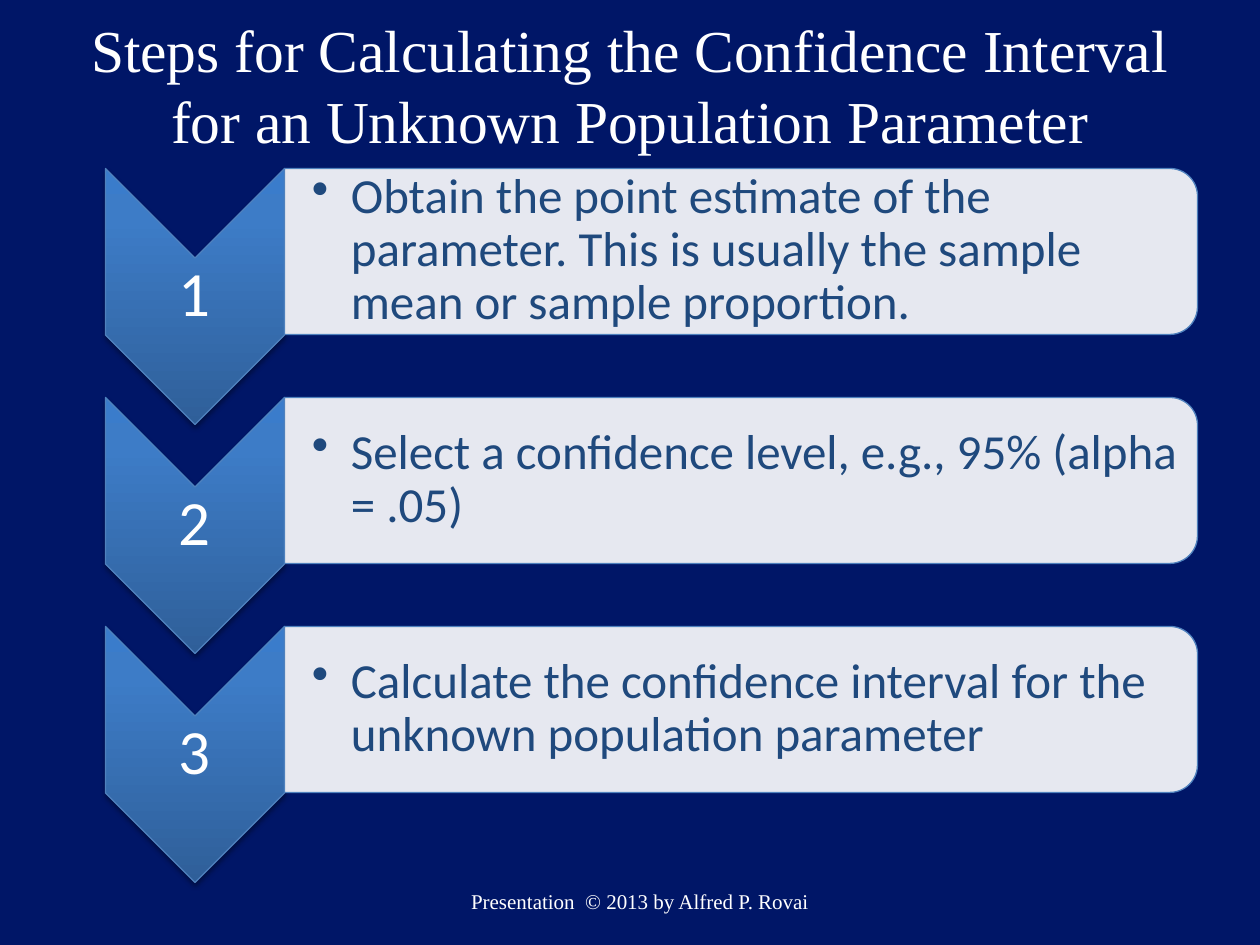
from lxml import etree
from pptx import Presentation
from pptx.dml.color import RGBColor
from pptx.enum.shapes import MSO_SHAPE
from pptx.enum.text import MSO_ANCHOR, PP_ALIGN
from pptx.oxml import parse_xml
from pptx.oxml.ns import qn
from pptx.util import Pt

CHEVRON = MSO_SHAPE.CHEVRON
ROUNDED_END = MSO_SHAPE.ROUND_2_SAME_RECTANGLE
MIDDLE = MSO_ANCHOR.MIDDLE
CENTER = PP_ALIGN.CENTER
LEFT = PP_ALIGN.LEFT
NAMESPACE = 'xmlns:a="http://schemas.openxmlformats.org/drawingml/2006/main"'
SCALE = 914400 / 126
COLORS = {
    "background": "001667",
    "white": "FFFFFF",
    "text": "1F497D",
    "outline": "4F81BD",
    "dark": "2F5F99",
    "middle": "3D7CC7",
    "light": "3A7CCB",
    "shadow": "000000",
}
STEPS = [
    "Obtain the point estimate of the parameter. This is usually the sample mean or sample proportion.",
    "Select a confidence level, e.g., 95% (alpha = .05)",
    "Calculate the confidence interval for the unknown population parameter",
]
STEP_PITCH = 229


def px(*lengths):
    return [round(length * SCALE) for length in lengths]


def add_text(text, place, size, font="Calibri", color="white", align=CENTER,
             insets=(13, 6, 13, 6), spacing=None, bullet_indent=0):
    box = slide.shapes.add_textbox(*px(*place))
    frame = box.text_frame
    frame.word_wrap = True
    frame.vertical_anchor = MIDDLE
    frame.margin_left, frame.margin_top, frame.margin_right, frame.margin_bottom = px(*insets)
    para = frame.paragraphs[0]
    para.alignment = align
    if spacing:
        para.line_spacing = spacing
    if bullet_indent:
        indent = px(bullet_indent)[0]
        properties = para._p.get_or_add_pPr()
        properties.set("marL", str(indent))
        properties.set("indent", str(-indent))
        etree.SubElement(properties, qn("a:buChar")).set("char", "•")
    span = para.add_run()
    span.text = text
    span.font.name = font
    span.font.size = Pt(size)
    span.font.color.rgb = RGBColor.from_string(COLORS[color])


deck = Presentation()
deck.slide_width, deck.slide_height = px(1260, 945)
slide = deck.slides.add_slide(deck.slide_layouts[6])
slide.background.fill.solid()
slide.background.fill.fore_color.rgb = RGBColor.from_string(COLORS["background"])

add_text("Steps for Calculating the Confidence Interval for an Unknown Population Parameter",
         (63, 0, 1134, 168), 34, font="Times New Roman")

stops = "".join(
    f'<a:gs pos="{position}000"><a:srgbClr val="{COLORS[name]}"/></a:gs>'
    for position, name in [(0, "dark"), (80, "middle"), (100, "light")]
)
gradient = (f'<a:gradFill {NAMESPACE} rotWithShape="0"><a:gsLst>{stops}</a:gsLst>'
            '<a:lin ang="16200000" scaled="0"/></a:gradFill>')
shadow = (f'<a:effectLst {NAMESPACE}><a:outerShdw blurRad="{Pt(3.1)}" dist="{Pt(1.8)}" '
          f'dir="5400000" rotWithShape="0"><a:srgbClr val="{COLORS["shadow"]}">'
          '<a:alpha val="35000"/></a:srgbClr></a:outerShdw></a:effectLst>')

for index, step in enumerate(STEPS):
    offset = index * STEP_PITCH

    arrow = slide.shapes.add_shape(CHEVRON, *px(67, 207 + offset, 256, 179))
    panel = slide.shapes.add_shape(ROUNDED_END, *px(658, offset - 205, 166, 913))
    for shape in (arrow, panel):
        shape.rotation = 90
        shape.shadow.inherit = False
        shape.fill.solid()
        shape.fill.fore_color.rgb = RGBColor.from_string(COLORS["white"])
        shape.line.color.rgb = RGBColor.from_string(COLORS["outline"])
        shape.line.width = Pt(0.75)

    arrow_properties = arrow._element.spPr
    arrow_properties.replace(arrow_properties.find(qn("a:solidFill")), parse_xml(gradient))
    arrow_properties.replace(arrow_properties.find(qn("a:effectLst")), parse_xml(shadow))
    panel_color = panel._element.spPr.find(qn("a:solidFill"))[0]
    etree.SubElement(panel_color, qn("a:alpha")).set("val", "90000")

    add_text(str(index + 1), (105, 258 + offset, 179, 77), 36,
             insets=(4, 4, 4, 4), spacing=0.9)
    add_text(step, (284, 176 + offset, 905, 150), 28, color="text", align=LEFT,
             insets=(28, 3, 3, 3), spacing=0.9, bullet_indent=39)

add_text("Presentation  © 2013 by Alfred P. Rovai", (220, 876, 840, 50), 12,
         font="Times New Roman")

deck.save("out.pptx")
